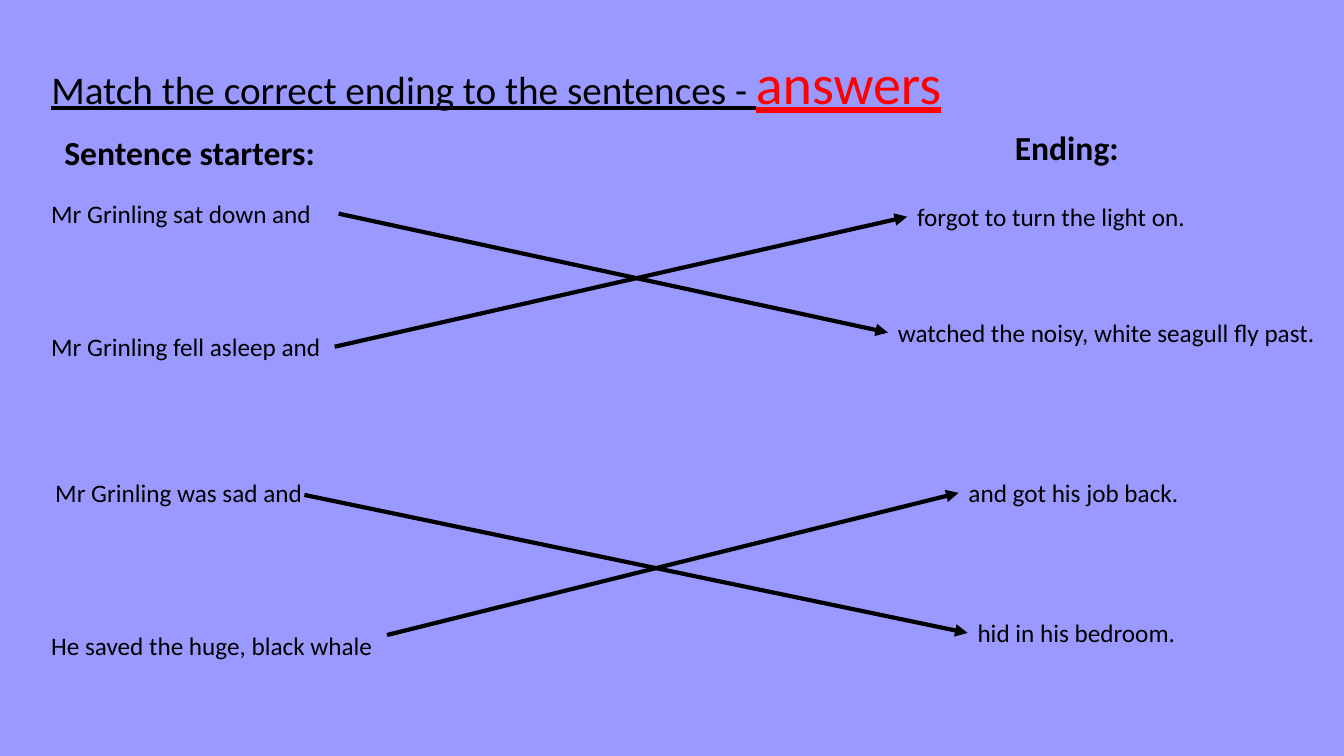
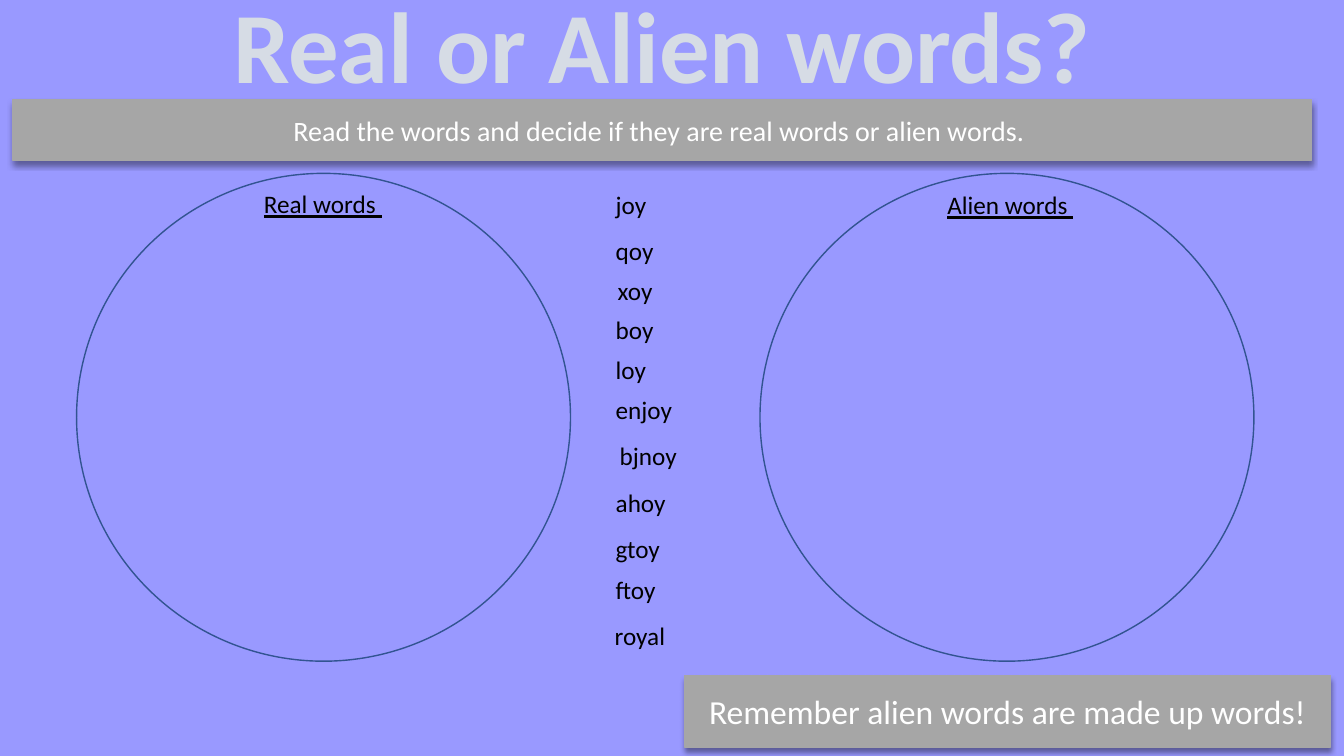
from lxml import etree
from pptx import Presentation
from pptx import util as u
from pptx.dml.color import RGBColor
from pptx.enum import shapes, text
from pptx.oxml.ns import qn

COLORS = {
    "page": "9999FF", "ink": "000000", "answer": "FF0000", "heading": "D6DCE5",
    "bar": "A6A6A6", "bar_text": "FFFFFF", "circle": "325491",
}
RGB = {role: RGBColor.from_string(value) for role, value in COLORS.items()}
PLAIN = {"name": "Calibri", "size": u.Pt(18)}
UNDERLINED = {**PLAIN, "underline": True}
COLUMN_HEAD = {**PLAIN, "size": u.Pt(24), "bold": True}

deck = Presentation()
deck.slide_width, deck.slide_height = u.Inches(13.333), u.Inches(7.5)
CELL = deck.slide_width / 40
page_fill = deck.slide_master.background.fill
page_fill.solid()
page_fill.fore_color.rgb = RGB["page"]


def grid(*cells):
    return [round(cell * CELL) for cell in cells]


def write(holder, place, runs, align=text.PP_ALIGN.LEFT, anchor=text.MSO_ANCHOR.TOP):
    holder.left, holder.top, holder.width, holder.height = grid(*place)
    frame = holder.text_frame
    frame_format = {"word_wrap": True, "auto_size": text.MSO_AUTO_SIZE.NONE,
                    "vertical_anchor": anchor}
    for attribute, value in frame_format.items():
        setattr(frame, attribute, value)
    paragraph = frame.paragraphs[0]
    paragraph.alignment = align
    for words, role, font_format in runs:
        run = paragraph.add_run()
        run.text = words
        run.font.color.rgb = RGB[role]
        for attribute, value in font_format.items():
            setattr(run.font, attribute, value)


matching = deck.slides.add_slide(deck.slide_layouts[5])
write(matching.shapes.title, (1.23, 1.29, 35.34, 2.31), [
    ("Match the correct ending to the sentences - ", "ink", {**UNDERLINED, "size": u.Pt(28)}),
    ("answers", "answer", {**UNDERLINED, "size": u.Pt(40)}),
])

for heading, left, top in [("Sentence starters:", 1.62, 3.78), ("Ending:", 29.91, 3.63)]:
    write(matching.shapes.add_textbox(0, 0, 0, 0), (left, top, 9, 1.5),
          [(heading, "ink", COLUMN_HEAD)])

sentences = [
    ("Mr Grinling sat down and", 1.23, 5.76, (10.08, 6.36),
     "watched the noisy, white seagull fly past.", 26.43, 9.3),
    ("Mr Grinling fell asleep and", 1.23, 9.72, (9.96, 10.32),
     "forgot to turn the light on.", 27, 5.85),
    ("Mr Grinling was sad and", 1.35, 14.07, (9.06, 14.73),
     "hid in his bedroom.", 28.8, 18.24),
    ("He saved the huge, black whale", 1.23, 18.6, (11.52, 18.9),
     "and got his job back.", 28.53, 14.07),
]
for starter, starter_left, starter_top, arrow_start, ending, ending_left, ending_top in sentences:
    for words, left, top, width in [(starter, starter_left, starter_top, 12),
                                    (ending, ending_left, ending_top, 13.5)]:
        write(matching.shapes.add_textbox(0, 0, 0, 0), (left, top, width, 1.2),
              [(words, "ink", PLAIN)])
    answer_arrow = matching.shapes.add_connector(
        shapes.MSO_CONNECTOR.STRAIGHT, *grid(*arrow_start, ending_left, ending_top + 0.6))
    answer_arrow.line.color.rgb = RGB["ink"]
    answer_arrow.line.width = u.Pt(3)
    properties = answer_arrow._element.spPr
    etree.SubElement(properties.find(qn("a:ln")), qn("a:tailEnd"), type="triangle")
    etree.SubElement(properties, qn("a:effectLst"))

sorting = deck.slides.add_slide(deck.slide_layouts[5])
write(sorting.shapes.title, (6.51, -0.66, 26.4, 3.93),
      [("Real or Alien words?", "heading", {**PLAIN, "size": u.Pt(72), "bold": True})],
      text.PP_ALIGN.CENTER)

instructions = [
    ("Read the words and decide if they are real words or alien words. ",
     20, (0.39, 2.97, 38.64, 1.8)),
    ("Remember alien words are made up words!", 24, (20.37, 20.1, 19.23, 2.13)),
]
for words, size, place in instructions:
    bar = sorting.shapes.add_shape(shapes.MSO_SHAPE.RECTANGLE, *grid(*place))
    bar.fill.solid()
    bar.fill.fore_color.rgb = bar.line.color.rgb = RGB["bar"]
    bar.line.width = u.Pt(1)
    bar.shadow.inherit = False
    shadow = etree.SubElement(
        bar._element.spPr.find(qn("a:effectLst")), qn("a:outerShdw"),
        blurRad=str(u.Pt(4)), dist=str(u.Pt(3)), dir="5400000", rotWithShape="0")
    shade = etree.SubElement(shadow, qn("a:srgbClr"), val=COLORS["ink"])
    etree.SubElement(shade, qn("a:alpha"), val="40000")
    write(bar, place, [(words, "bar_text", {**PLAIN, "size": u.Pt(size)})],
          text.PP_ALIGN.CENTER, text.MSO_ANCHOR.MIDDLE)

for label, circle_left, label_top in [("Real words ", 2.28, 5.46), ("Alien words ", 22.62, 5.49)]:
    circle = sorting.shapes.add_shape(
        shapes.MSO_SHAPE.OVAL, *grid(circle_left, 5.16, 14.7, 14.52))
    circle.fill.background()
    circle.line.color.rgb = RGB["circle"]
    circle.line.width = u.Pt(1)
    circle.shadow.inherit = False
    write(sorting.shapes.add_textbox(0, 0, 0, 0), (circle_left + 5.28, label_top, 4.8, 1.2),
          [(label, "ink", UNDERLINED)])

sorted_words = [
    ("joy", 18.03, 5.49), ("qoy", 18.03, 6.87), ("xoy", 18.09, 8.04), ("boy", 18.03, 9.21),
    ("loy", 18.03, 10.41), ("enjoy", 18.03, 11.58), ("bjnoy", 18.15, 12.96),
    ("ahoy", 18.03, 14.37), ("gtoy", 18.03, 15.72), ("ftoy", 18.03, 16.95), ("royal", 18, 18.3),
]
for word, left, top in sorted_words:
    write(sorting.shapes.add_textbox(0, 0, 0, 0), (left, top, 3, 1.2), [(word, "ink", PLAIN)])

deck.save("out.pptx")
